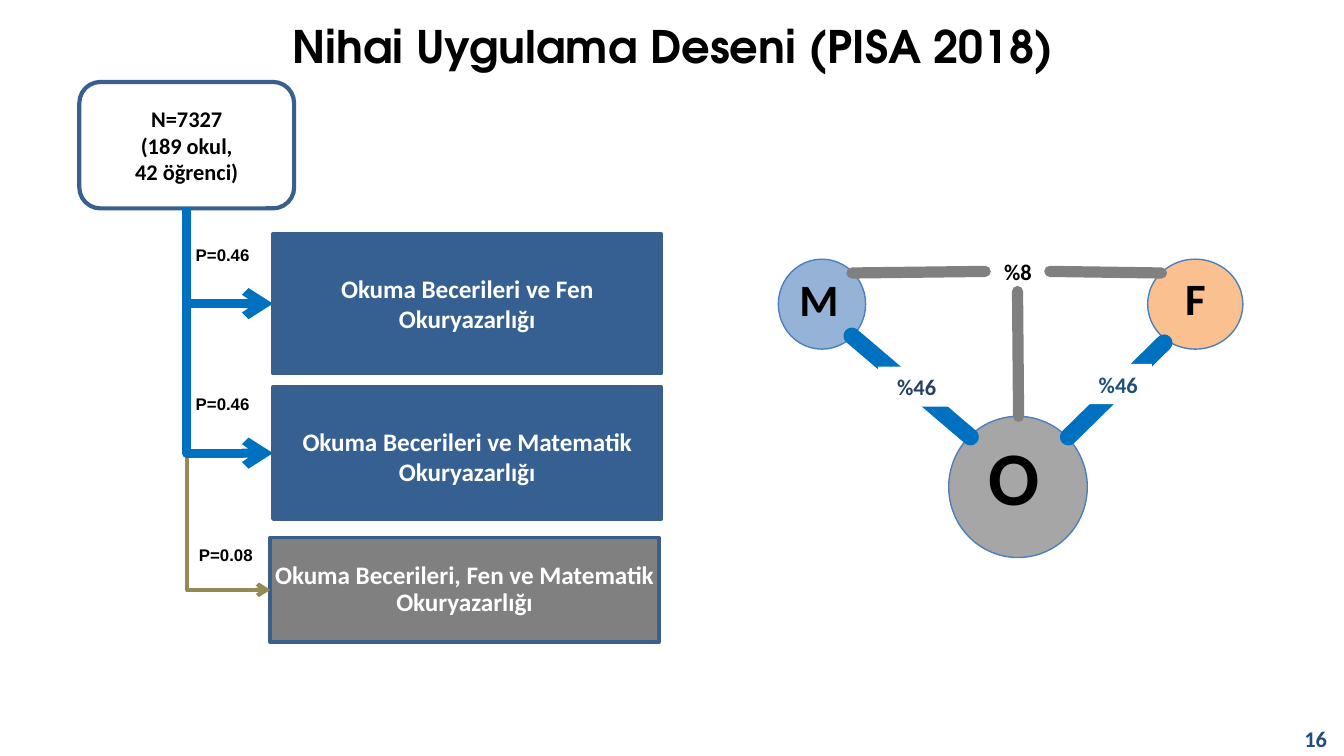
from lxml.etree import SubElement
from pptx import Presentation
from pptx.dml.color import RGBColor
from pptx.enum.shapes import MSO_CONNECTOR as CONN, MSO_SHAPE as SHAPE
from pptx.enum.text import MSO_ANCHOR as ANCHOR, MSO_AUTO_SIZE as AUTO, PP_ALIGN as ALIGN
from pptx.oxml.ns import qn
from pptx.util import Cm, Pt

TITLE = "Nihai Uygulama Deseni (PISA 2018)"
SAMPLE = ["N=7327", "(189 okul,", "42 öğrenci)"]
BLUE, GRAY, NAVY, EDGE = "0070C0", "808080", "376092", "3A5F8C"
BRANCHES = [
    {"text": "Okuma Becerileri ve Fen Okuryazarlığı", "box": (5.16, 4.42, 7.34, 2.64),
     "fill": NAVY, "insets": (0, 0, 0, 0), "spacing": 1.0,
     "label": "P=0.46", "label_at": (3.45, 4.5), "line": (BLUE, 4.75)},
    {"text": "Okuma Becerileri ve Matematik Okuryazarlığı", "box": (5.16, 7.32, 7.34, 2.49),
     "fill": NAVY, "insets": (0.25, 0.13, 0.25, 0), "spacing": 1.0,
     "label": "P=0.46", "label_at": (3.45, 7.32), "line": (BLUE, 4.75)},
    {"text": "Okuma Becerileri, Fen ve Matematik Okuryazarlığı", "box": (5.11, 10.16, 7.34, 1.98),
     "fill": GRAY, "insets": (0, 0, 0, 0), "spacing": 0.9,
     "label": "P=0.08", "label_at": (3.51, 10.16), "line": ("948A54", 2.25)},
]
CIRCLES = [
    ("O", (17.93, 7.87, 2.62, 2.67), "A6A6A6", (18.44, 8, 1.8, 2.44), 40.5),
    ("M", (14.71, 4.9, 1.65, 1.7), "95B3D7", (14.86, 5, 1.52, 1.57), 24),
    ("F", (21.69, 4.9, 1.8, 1.7), "FAC090", (22.15, 4.98, 1.09, 1.57), 24),
]
LINKS = [
    ((20.19, 8.26, 22, 6.48), BLUE, 9),
    ((18.34, 8.26, 16.1, 6.35), BLUE, 9),
    ((19.25, 7.87, 19.23, 5.51), GRAY, 6),
    ((18.62, 5.13, 16.1, 5.16), GRAY, 6),
    ((21.95, 5.16, 19.84, 5.13), GRAY, 6),
]
SHARES = [
    ("%8", (18.62, 4.75, 1.24, 0.76), "000000", None),
    ("%46", (16.59, 6.93, 1.47, 0.76), "254061", "FFFFFF"),
    ("%46", (20.5, 6.88, 1.27, 0.76), "1F4E79", "FFFFFF"),
]


def rgb(value):
    """Turn a hex string into a colour."""
    return RGBColor.from_string(value)


def write(sp, lines, size, color="000000", name="Calibri", align=ALIGN.LEFT,
          anchor=ANCHOR.TOP, wrap=False, insets=(0.25, 0.13, 0.25, 0.13), spacing=None):
    """Fill a shape with formatted paragraphs."""
    tf = sp.text_frame
    margins = zip(("margin_left", "margin_top", "margin_right", "margin_bottom"), map(Cm, insets))
    frame = {"auto_size": AUTO.NONE, "word_wrap": wrap, "vertical_anchor": anchor, **dict(margins)}
    for key, value in frame.items():
        setattr(tf, key, value)
    for i, line in enumerate(lines):
        p = tf.add_paragraph() if i else tf.paragraphs[0]
        p.alignment, p.line_spacing = align, spacing
        r = p.add_run()
        r.text = line
        for key, value in {"size": Pt(size), "name": name, "bold": True}.items():
            setattr(r.font, key, value)
        r.font.color.rgb = rgb(color)


def add_text(s, at, lines, size, fill=None, **style):
    """Add a text box, optionally filled."""
    sp = s.shapes.add_textbox(*map(Cm, at))
    if fill:
        sp.fill.solid()
        sp.fill.fore_color.rgb = rgb(fill)
    write(sp, lines, size, **style)


def add_box(s, kind, at, fill, edge, width):
    """Add a filled and outlined preset shape."""
    sp = s.shapes.add_shape(kind, *map(Cm, at))
    sp.shadow.inherit = False
    sp.fill.solid()
    sp.fill.fore_color.rgb = rgb(fill)
    sp.line.color.rgb = rgb(edge)
    sp.line.width = Pt(width)
    return sp


def add_line(s, kind, ends, color, width):
    """Add a connector without shadow."""
    c = s.shapes.add_connector(kind, *ends)
    c.line.color.rgb = rgb(color)
    c.line.width = Pt(width)
    SubElement(c._element.spPr, qn("a:effectLst"))
    return c


def add_branch(s, source, target, color, width):
    """Join the bottom of one box to the left of another with one bend and an arrow."""
    x1, y1 = source.left + source.width // 2, source.top + source.height
    x2, y2 = target.left, target.top + target.height // 2
    c = add_line(s, CONN.ELBOW, (x1, y1, x2, y2), color, width)
    c.begin_connect(source, 2)
    c.end_connect(target, 1)
    dx, dy = x2 - x1, y2 - y1
    turned = {"left": (x1 + x2 - dy) // 2, "top": (y1 + y2 - dx) // 2, "width": dy, "height": dx}
    for key, value in turned.items():
        setattr(c, key, value)
    pr = c._element.spPr
    pr.find(qn("a:prstGeom")).set("prst", "bentConnector2")
    xfrm = pr.find(qn("a:xfrm"))
    xfrm.set("rot", "16200000")
    xfrm.set("flipH", "1")
    SubElement(pr.find(qn("a:ln")), qn("a:tailEnd"), type="arrow")


def add_design(s):
    """Draw the sample box and its three branches."""
    boxes = []
    for b in BRANCHES:
        sp = add_box(s, SHAPE.RECTANGLE, b["box"], b["fill"], EDGE, 2)
        write(sp, [b["text"]], 13.5, "FFFFFF", align=ALIGN.CENTER, anchor=ANCHOR.MIDDLE,
              wrap=True, insets=b["insets"], spacing=b["spacing"])
        boxes.append(sp)
    sample = add_box(s, SHAPE.ROUNDED_RECTANGLE, (1.5, 1.55, 4.06, 2.39), "FFFFFF", EDGE, 2.25)
    write(sample, SAMPLE, 12, align=ALIGN.CENTER, anchor=ANCHOR.MIDDLE, wrap=True)
    for b, sp in reversed(list(zip(BRANCHES, boxes))):
        add_branch(s, sample, sp, *b["line"])
        add_text(s, (*b["label_at"], 1.55, 0.99), [b["label"]], 9, name="Arial")


def add_network(s):
    """Draw the circles, their links and the shares."""
    for _, at, fill, _, _ in CIRCLES:
        add_box(s, SHAPE.OVAL, at, fill, "4B7EBC", 0.75)
    for letter, _, _, at, size in CIRCLES:
        add_text(s, at, [letter], size)
    for ends, color, width in LINKS:
        c = add_line(s, CONN.STRAIGHT, map(Cm, ends), color, width)
        c._element.spPr.find(qn("a:ln")).set("cap", "rnd")
    for text, at, color, fill in SHARES:
        add_text(s, at, [text], 12, fill, color=color, align=ALIGN.CENTER)


def main():
    """Build and save the slide."""
    prs = Presentation()
    prs.slide_width, prs.slide_height = Cm(25.4), Cm(14.29)
    s = prs.slides.add_slide(prs.slide_layouts[5])
    title = s.shapes.title
    place = {"left": 5.21, "top": 0.23, "width": 15.01, "height": 1.27}
    for key, value in place.items():
        setattr(title, key, Cm(value))
    write(title, [TITLE], 24, name="TeX Gyre Adventor", align=ALIGN.CENTER)
    add_design(s)
    add_network(s)
    add_text(s, (19.61, 13.59, 5.72, 0.76), ["16"], 12, color="1F4E79",
             align=ALIGN.RIGHT, anchor=ANCHOR.MIDDLE, wrap=True)
    prs.save("out.pptx")


if __name__ == "__main__":
    main()
